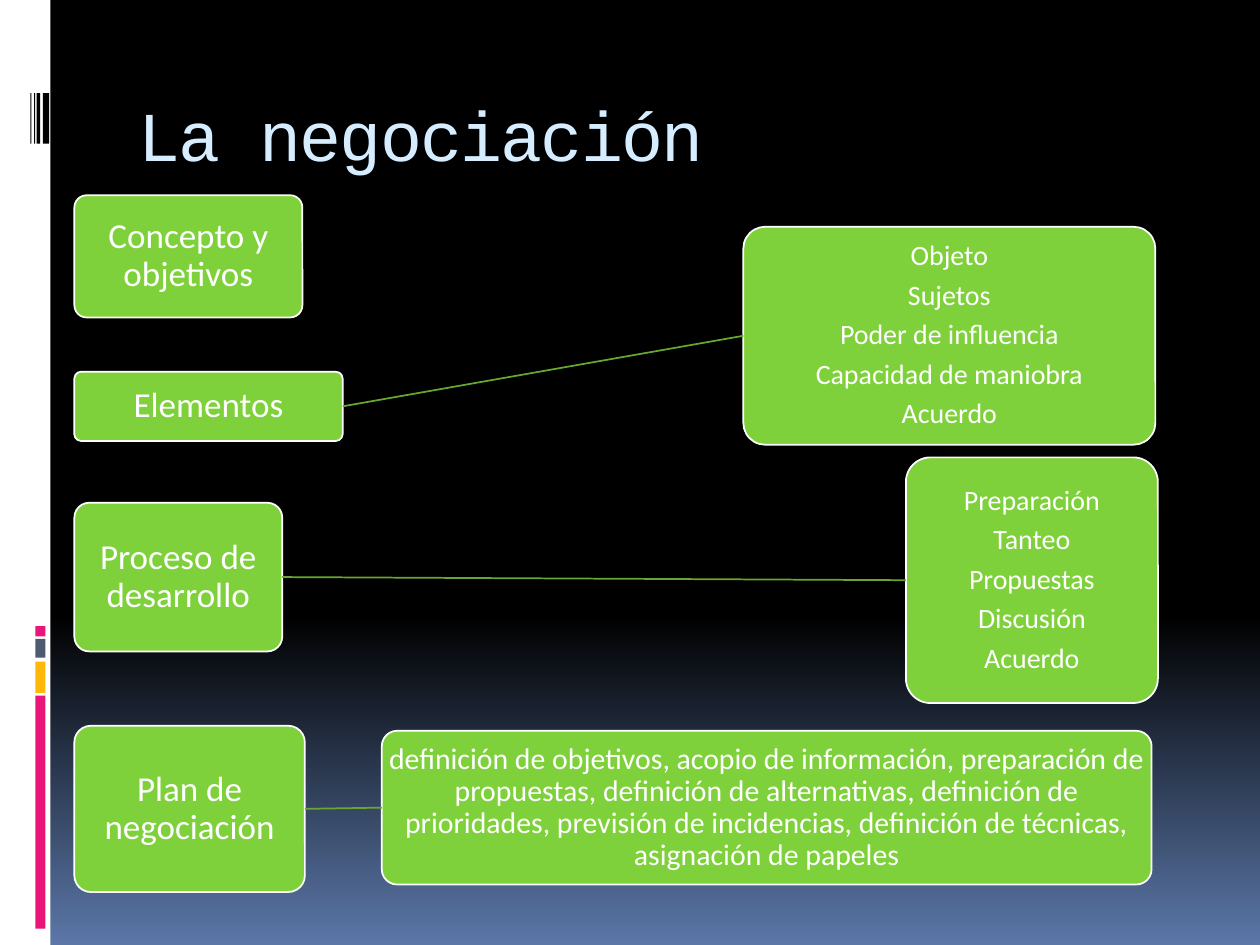
from lxml import etree
from pptx import Presentation, util as u
from pptx.dml.color import RGBColor
from pptx.enum import shapes, text
from pptx.oxml.ns import qn

GREEN, EDGE, WHITE, BLACK = "7FD13B", "66A72F", "FFFFFF", "000000"
PINK, GOLD, SLATE = "EA157A", "FEB80A", "4E5B6F"


def color(code):
    return RGBColor.from_string(code)


def apply(item, values):
    for name, value in values.items():
        setattr(item, name, value)


class Deck:
    font = "Calibri"
    frame = dict(word_wrap=True, vertical_anchor=text.MSO_ANCHOR.MIDDLE,
                 margin_left=0, margin_right=0, margin_top=0, margin_bottom=0)

    def __init__(self, wide, high):
        self.prs = Presentation()
        apply(self.prs, dict(slide_width=u.Inches(wide), slide_height=u.Inches(high)))
        self.slide = self.prs.slides.add_slide(self.prs.slide_layouts[5])

    def back(self, start, end, begin):
        fill = self.slide.background.fill
        fill.gradient()
        fill.gradient_angle = 270
        for stop, code, pos in zip(fill.gradient_stops, (start, end), (begin, 1)):
            stop.color.rgb = color(code)
            stop.position = pos

    def title(self, words, left, top, wide, high):
        head = self.slide.shapes.title
        apply(head, dict(left=u.Inches(left), top=u.Inches(top),
                         width=u.Inches(wide), height=u.Inches(high)))
        frame = head.text_frame
        frame.text = words
        frame.vertical_anchor = text.MSO_ANCHOR.MIDDLE
        para = frame.paragraphs[0]
        para.alignment = text.PP_ALIGN.LEFT
        run = para.runs[0]
        apply(run.font, dict(name="Courier New", size=u.Pt(40)))
        run.font.color.rgb = color("D6ECFF")
        run._r.get_or_add_rPr().set("spc", "-100")

    def shape(self, kind, area, fill):
        item = self.slide.shapes.add_shape(kind, *map(u.Inches, area))
        item.shadow.inherit = False
        item.fill.solid()
        item.fill.fore_color.rgb = color(fill)
        return item

    def bar(self, area, fill):
        self.shape(shapes.MSO_SHAPE.RECTANGLE, area, fill).line.fill.background()

    def box(self, area, lines, size):
        item = self.shape(shapes.MSO_SHAPE.ROUNDED_RECTANGLE, area, GREEN)
        item.adjustments[0] = 0.1
        item.line.color.rgb = color(WHITE)
        item.line.width = u.Pt(1)
        frame = item.text_frame
        apply(frame, self.frame)
        frame.text = "\n".join(lines)
        for para in frame.paragraphs:
            apply(para, dict(alignment=text.PP_ALIGN.CENTER, line_spacing=0.9,
                             space_after=u.Pt(size * 0.33)))
            apply(para.font, dict(name=self.font, size=u.Pt(size)))
            para.font.color.rgb = color(WHITE)
        return item

    def link(self, start, end):
        line = self.slide.shapes.add_connector(shapes.MSO_CONNECTOR.STRAIGHT, 0, 0, 0, 0)
        line.begin_connect(start, 3)
        line.end_connect(end, 1)
        line.line.color.rgb = color(EDGE)
        line.line.width = u.Pt(1)
        etree.SubElement(line._element.spPr, qn("a:effectLst"))


# Topics: box, label, then detail box, lines and text size
LEFT = 0.59
TOPICS = [
    ((LEFT, 1.55, 1.81, 0.97), "Concepto y objetivos", None),
    ((LEFT, 2.95, 2.13, 0.55), "Elementos",
     ((5.9, 1.8, 3.27, 1.73),
      ["Objeto", "Sujetos", "Poder de influencia", "Capacidad de maniobra", "Acuerdo"], 16)),
    ((LEFT, 3.99, 1.65, 1.18), "Proceso de desarrollo",
     ((7.19, 3.63, 2, 1.95),
      ["Preparación", "Tanteo", "Propuestas", "Discusión", "Acuerdo"], 16)),
    ((LEFT, 5.76, 1.83, 1.32), "Plan de negociación",
     ((3.03, 5.8, 6.11, 1.22),
      ["definición de objetivos, acopio de información, preparación de propuestas, "
       "definición de alternativas, definición de prioridades, previsión de incidencias, "
       "definición de técnicas, asignación de papeles"], 17)),
]


def main():
    deck = Deck(10, 7.5)
    deck.back(BLACK, "5B77A8", 0.65)

    # Side strip with its colour blocks and stripes
    deck.bar((0, 0, 0.4, 7.5), WHITE)
    for top, high, fill in ((5.52, 1.85, PINK), (5.25, 0.25, GOLD),
                            (5.07, 0.15, SLATE), (4.97, 0.08, PINK)):
        deck.bar((0.28, top, 0.08, high), fill)
    for left, wide in ((0.34, 0.05), (0.29, 0.03), (0.27, 0.01), (0.24, 0.01)):
        deck.bar((left, 0.74, wide, 0.4), BLACK)

    deck.title("La negociación", 1, 0.56, 8.5, 1)

    # Topic boxes, each joined to its details
    for area, label, detail in TOPICS:
        topic = deck.box(area, [label], 20)
        if detail:
            deck.link(topic, deck.box(*detail))

    deck.prs.save("out.pptx")


if __name__ == "__main__":
    main()
